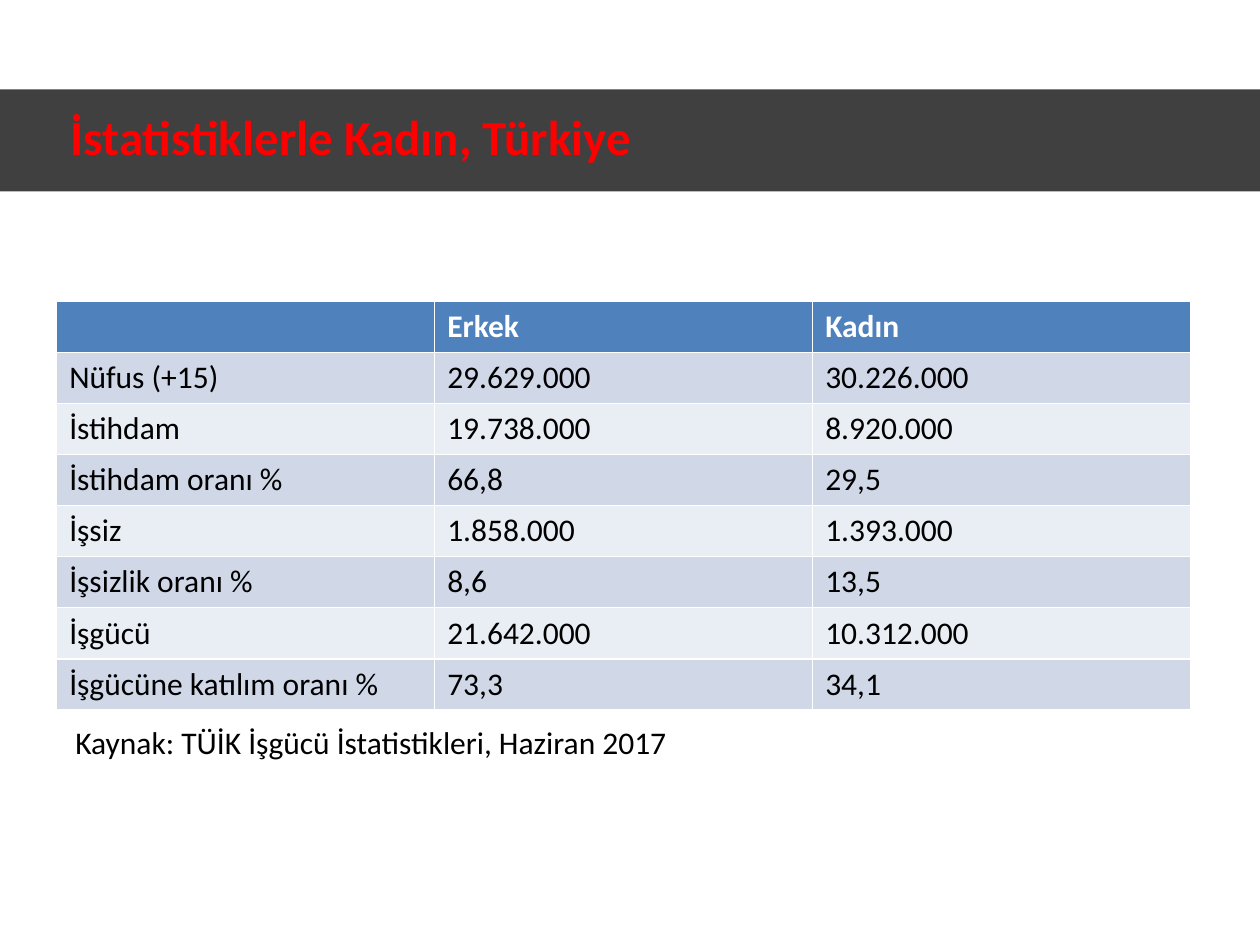
from lxml import etree
from pptx import Presentation
from pptx.dml.color import RGBColor
from pptx.enum.shapes import MSO_SHAPE
from pptx.enum.text import MSO_ANCHOR, MSO_AUTO_SIZE, PP_ALIGN
from pptx.oxml.ns import qn
from pptx.util import Inches, Pt

RECTANGLE = MSO_SHAPE.RECTANGLE
MIDDLE = MSO_ANCHOR.MIDDLE
LEFT = PP_ALIGN.LEFT
FIT_SHAPE = MSO_AUTO_SIZE.SHAPE_TO_FIT_TEXT

COLORS = {
    "band": "000000",
    "title": "FF0000",
    "header": "4F81BD",
    "header_text": "FFFFFF",
    "odd_row": "D0D8E8",
    "even_row": "E9EDF4",
    "text": "000000",
}

ROWS = [
    ("", "Erkek", "Kadın"),
    ("Nüfus (+15)", "29.629.000", "30.226.000"),
    ("İstihdam", "19.738.000", "8.920.000"),
    ("İstihdam oranı %", "66,8", "29,5"),
    ("İşsiz", "1.858.000", "1.393.000"),
    ("İşsizlik oranı %", "8,6", "13,5"),
    ("İşgücü", "21.642.000", "10.312.000"),
    ("İşgücüne katılım oranı %", "73,3", "34,1"),
]


def format_text(text_frame, size, color, bold=False):
    for paragraph in text_frame.paragraphs:
        paragraph.alignment = LEFT
        for run in paragraph.runs:
            run.font.name = "Calibri"
            run.font.size = Pt(size)
            run.font.bold = bold
            run.font.color.rgb = RGBColor.from_string(COLORS[color])


presentation = Presentation()
presentation.slide_width = Inches(10)
presentation.slide_height = Inches(7.5)
slide = presentation.slides.add_slide(presentation.slide_layouts[5])

title = slide.shapes.title
title.left, title.top = Inches(0.46), Inches(0.7)
title.width, title.height = Inches(9.2), Inches(0.81)
title.text_frame.text = "İstatistiklerle Kadın, Türkiye"
title.text_frame.vertical_anchor = MIDDLE
title.text_frame.paragraphs[0].line_spacing = 0.9
format_text(title.text_frame, 28, "title", bold=True)

band = slide.shapes.add_shape(RECTANGLE, 0, Inches(0.71), Inches(10), Inches(0.81))
band.shadow.inherit = False
band.line.fill.background()
band.fill.solid()
band.fill.fore_color.rgb = RGBColor.from_string(COLORS["band"])
band_color = band._element.spPr.find(qn("a:solidFill")).find(qn("a:srgbClr"))
etree.SubElement(band_color, qn("a:alpha"), val="75000")
title._element.addprevious(band._element)

table = slide.shapes.add_table(
    len(ROWS), len(ROWS[0]), Inches(0.45), Inches(2.39), Inches(9), Inches(3.24)
).table
for row_index, values in enumerate(ROWS):
    is_header = row_index == 0
    fill = "header" if is_header else "odd_row" if row_index % 2 else "even_row"
    for column_index, value in enumerate(values):
        cell = table.cell(row_index, column_index)
        cell.text_frame.text = value
        cell.fill.solid()
        cell.fill.fore_color.rgb = RGBColor.from_string(COLORS[fill])
        text_color = "header_text" if is_header else "text"
        format_text(cell.text_frame, 18, text_color, bold=is_header)

source_note = slide.shapes.add_textbox(Inches(0.5), Inches(5.69), Inches(6.25), Inches(0.4))
source_note.text_frame.word_wrap = True
source_note.text_frame.auto_size = FIT_SHAPE
source_note.text_frame.text = "Kaynak: TÜİK İşgücü İstatistikleri, Haziran 2017"
format_text(source_note.text_frame, 18, "text")

presentation.save("out.pptx")
